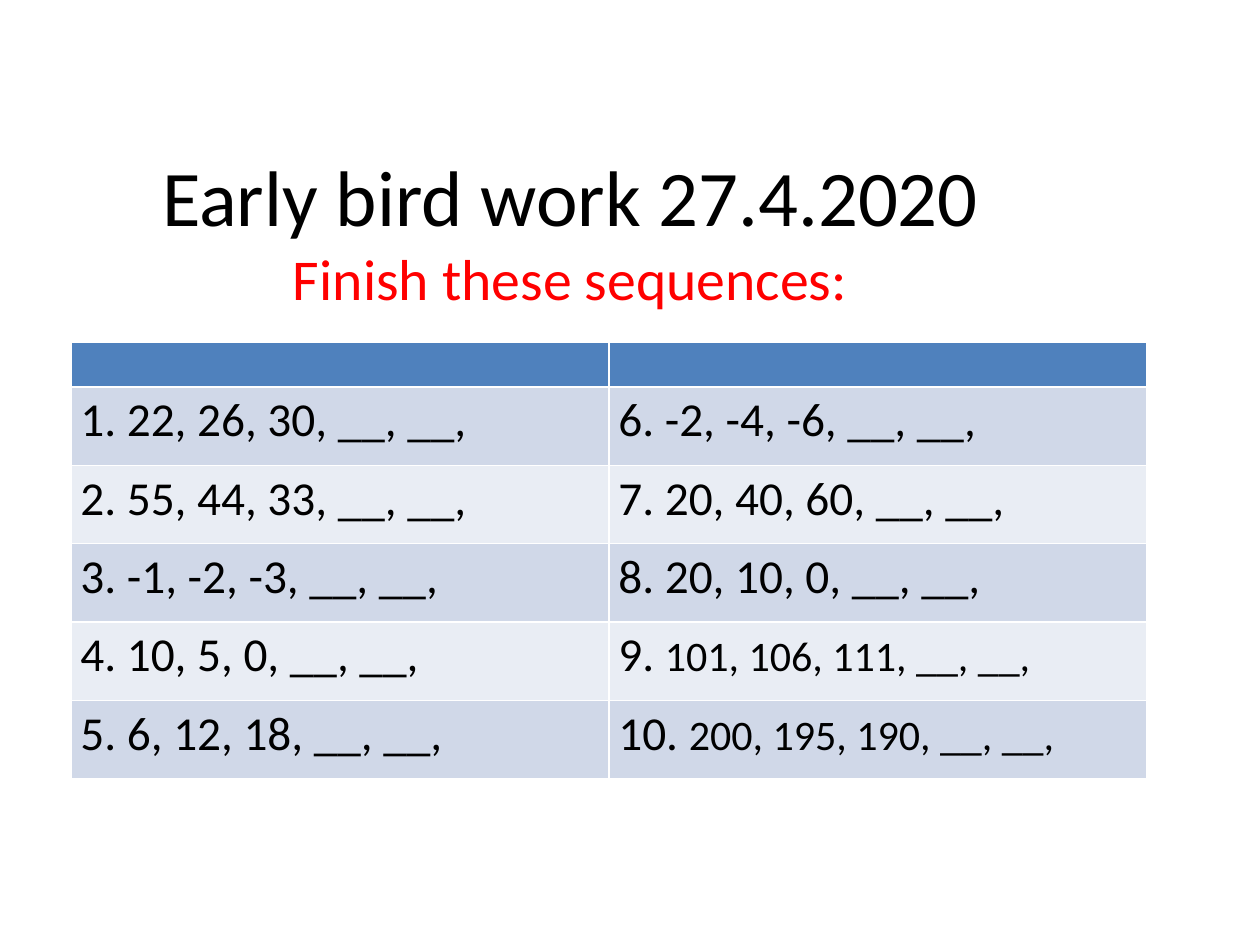
from lxml import etree
from pptx import Presentation
from pptx.dml.color import RGBColor
from pptx.enum.text import MSO_ANCHOR, MSO_AUTO_SIZE, PP_ALIGN
from pptx.oxml.ns import qn
from pptx.util import Cm, Pt

MIDDLE = MSO_ANCHOR.MIDDLE
CENTER = PP_ALIGN.CENTER
NO_FIT = MSO_AUTO_SIZE.NONE
TITLE_ONLY = 5
FONT = "Calibri"
COLORS = {
    "text": "000000",
    "prompt": "FF0000",
    "header": "4F81BD",
    "band_dark": "D0D8E8",
    "band_light": "E9EDF4",
}
# Each question is its number, its sequence and the size of the sequence
LEFT_QUESTIONS = [
    ("1. ", "22, 26, 30, __, __,", 27),
    ("2. ", "55, 44, 33, __, __,", 27),
    ("3. ", "-1, -2, -3, __, __,", 27),
    ("4. ", "10, 5, 0, __, __,", 27),
    ("5. ", "6, 12, 18, __, __,", 27),
]
RIGHT_QUESTIONS = [
    ("6. ", "-2, -4, -6, __, __,", 27),
    ("7. ", "20, 40, 60, __, __,", 27),
    ("8. ", "20, 10, 0, __, __,", 27),
    ("9. ", "101, 106, 111, __, __,", 24),
    ("10. ", "200, 195, 190, __, __,", 24),
]


def format_run(span, size, color):
    span.font.name = FONT
    span.font.size = Pt(size)
    span.font.color.rgb = RGBColor.from_string(COLORS[color])


def place_title(page, left, top, width, height):
    title = page.shapes.title
    title.left, title.top, title.width, title.height = left, top, width, height
    frame = title.text_frame
    frame.text = "Early bird work 27.4.2020\vFinish these sequences:"
    frame.word_wrap = True
    frame.auto_size = NO_FIT
    frame.vertical_anchor = MIDDLE
    para = frame.paragraphs[0]
    para.alignment = CENTER
    heading, prompt = para.runs
    format_run(heading, 45, "text")
    format_run(prompt, 33, "prompt")


def fill_cell(cell, color):
    cell.fill.solid()
    cell.fill.fore_color.rgb = RGBColor.from_string(COLORS[color])
    cell.margin_left = cell.margin_right = Cm(0.19)
    cell.margin_top = cell.margin_bottom = Cm(0.1)


def place_questions(page, left, top, width, header_height, row_height):
    columns = [LEFT_QUESTIONS, RIGHT_QUESTIONS]
    row_count = len(LEFT_QUESTIONS) + 1
    height = header_height + row_height * (row_count - 1)
    table = page.shapes.add_table(
        row_count, len(columns), left, top, width, height).table
    for row in table.rows:
        row.height = row_height
    table.rows[0].height = header_height

    for column, questions in enumerate(columns):
        # Empty header cell, with a small text size so the row stays low
        header = table.cell(0, column)
        fill_cell(header, "header")
        para = header.text_frame.paragraphs[0]
        etree.SubElement(para._p, qn("a:endParaRPr"), sz="1400")

        # Banded question rows
        for row, (number, sequence, size) in enumerate(questions, start=1):
            cell = table.cell(row, column)
            fill_cell(cell, "band_dark" if row % 2 else "band_light")
            para = cell.text_frame.paragraphs[0]
            for text, text_size in ((number, 27), (sequence, size)):
                span = para.add_run()
                span.text = text
                format_run(span, text_size, "text")


def main():
    deck = Presentation()
    deck.slide_width, deck.slide_height = Cm(25.4), Cm(19.05)
    page = deck.slides.add_slide(deck.slide_layouts[TITLE_ONLY])
    place_title(page, Cm(0.28), Cm(2.39), Cm(22.43), Cm(4.5))
    place_questions(page, Cm(1.43), Cm(6.89), Cm(21.69), Cm(0.91), Cm(1.58))
    deck.save("out.pptx")


if __name__ == "__main__":
    main()
